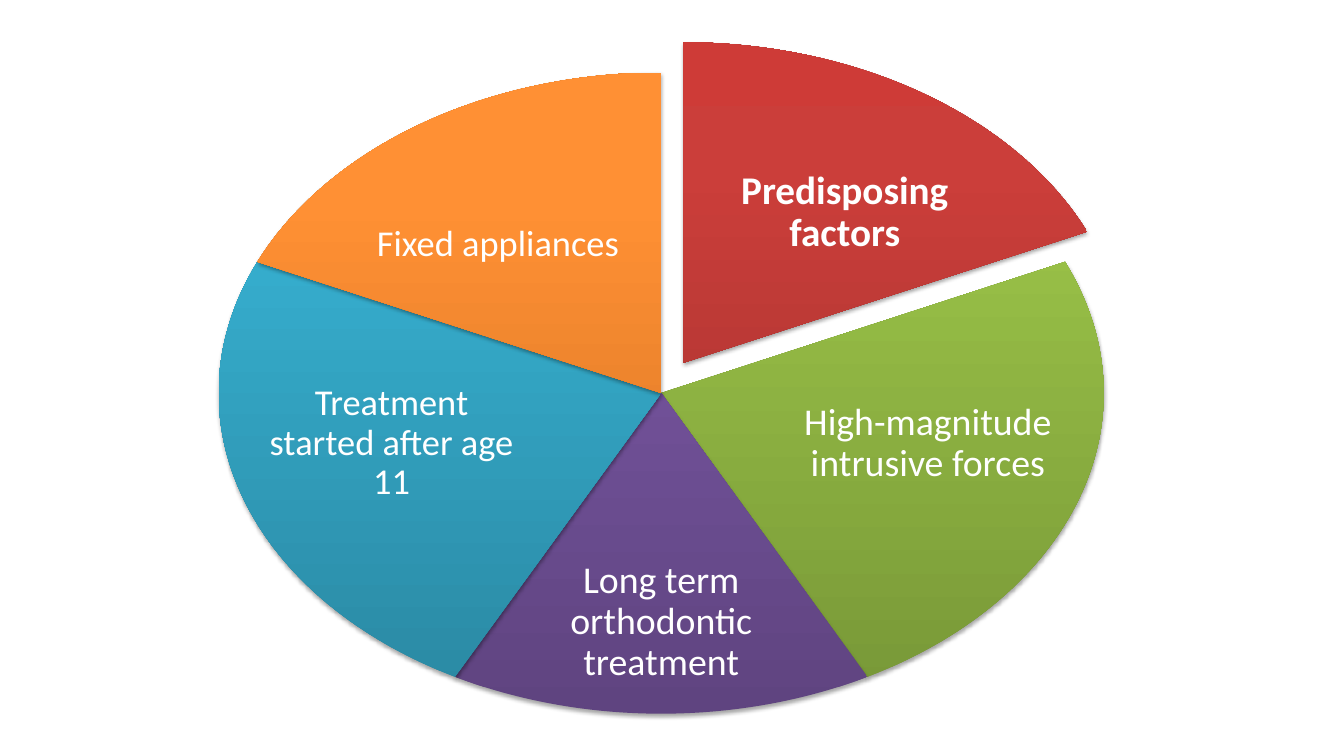
from copy import deepcopy

from lxml.etree import SubElement
from pptx import Presentation
from pptx.dml.color import RGBColor
from pptx.enum.shapes import MSO_SHAPE as Preset
from pptx.enum.text import MSO_ANCHOR as Anchor, PP_ALIGN as Align
from pptx.oxml.ns import qn
from pptx.util import Pt

SLIDE_SIZE = (960, 540)
PIE_BOX = (156.2, 51.8, 632.2, 458)
START_ANGLE = 270
STOP_POSITIONS = (0, 0.8, 1)
# label, gradient colours, offset from the pie, label box, size, bold
SLICES = [
    ("Predisposing factors", ("9C2F2D", "CB3E3A", "CE3B37"), (15.8, -21.6),
     (496.1, 98.6, 214.6, 106.6), 28, True),
    ("High-magnitude intrusive forces", ("779737", "9BC348", "9DC746"), (0, 0),
     (568.8, 259.2, 187.9, 115.2), 27, False),
    ("Long term orthodontic treatment", ("5F4480", "7B58A6", "7C57A8"), (0, 0),
     (359.3, 395.3, 226.1, 97.9), 27, False),
    ("Treatment started after age 11", ("2A88A2", "37B1D2", "34B4D6"), (0, 0),
     (185.8, 259.2, 187.9, 115.2), 26, False),
    ("Fixed appliances", ("CC6E20", "FF9034", "FF9136"), (0, 0),
     (248.4, 121.7, 214.6, 106.6), 26, False),
]
FRAME_FORMAT = dict(
    word_wrap=True, vertical_anchor=Anchor.MIDDLE,
    margin_left=Pt(2.9), margin_right=Pt(2.9),
    margin_top=Pt(2.9), margin_bottom=Pt(2.9))


def rgb(value):
    return RGBColor.from_string(value)


def apply(target, values):
    for name, value in values.items():
        setattr(target, name, value)


def fill_gradient(shape, colours):
    """Fill from bottom to top, with one stop for each colour."""
    shape.fill.gradient()
    shape.fill.gradient_angle = 90
    stop_list = shape._element.spPr.find(".//" + qn("a:gsLst"))
    stop_list.append(deepcopy(stop_list[-1]))
    for stop, position, colour in zip(shape.fill.gradient_stops, STOP_POSITIONS, colours):
        stop.position = position
        stop.color.rgb = rgb(colour)


def add_shadow(shape):
    shape.shadow.inherit = False
    effects = shape._element.spPr.find(qn("a:effectLst"))
    shadow = SubElement(effects, qn("a:outerShdw"), blurRad=str(Pt(3.1)),
                        dist=str(Pt(1.8)), dir="5400000", rotWithShape="0")
    colour = SubElement(shadow, qn("a:srgbClr"), val="000000")
    SubElement(colour, qn("a:alpha"), val="35000")


def add_slice(page, start, end, colours, offset):
    left, top, width, height = PIE_BOX
    shape = page.shapes.add_shape(
        Preset.PIE, Pt(left + offset[0]), Pt(top + offset[1]), Pt(width), Pt(height))
    # An adjustment of 0.6 is one degree
    shape.adjustments[0] = start % 360 * 0.6
    shape.adjustments[1] = end % 360 * 0.6
    fill_gradient(shape, colours)
    shape.line.fill.background()
    add_shadow(shape)


def add_label(page, text, area, size, bold):
    box = page.shapes.add_textbox(*map(Pt, area))
    apply(box.text_frame, FRAME_FORMAT)
    para = box.text_frame.paragraphs[0]
    apply(para, dict(alignment=Align.CENTER, line_spacing=0.9,
                     space_after=Pt(size * 0.35)))
    span = para.add_run()
    span.text = text
    apply(span.font, dict(name="Calibri", size=Pt(size), bold=bold))
    span.font.color.rgb = rgb("FFFFFF")


def main():
    deck = Presentation()
    deck.slide_width, deck.slide_height = map(Pt, SLIDE_SIZE)
    page = deck.slides.add_slide(deck.slide_layouts[6])
    sweep = 360 / len(SLICES)
    for index, (text, colours, offset, area, size, bold) in enumerate(SLICES):
        start = START_ANGLE + index * sweep
        add_slice(page, start, start + sweep, colours, offset)
        add_label(page, text, area, size, bold)
    deck.save("out.pptx")


if __name__ == "__main__":
    main()
